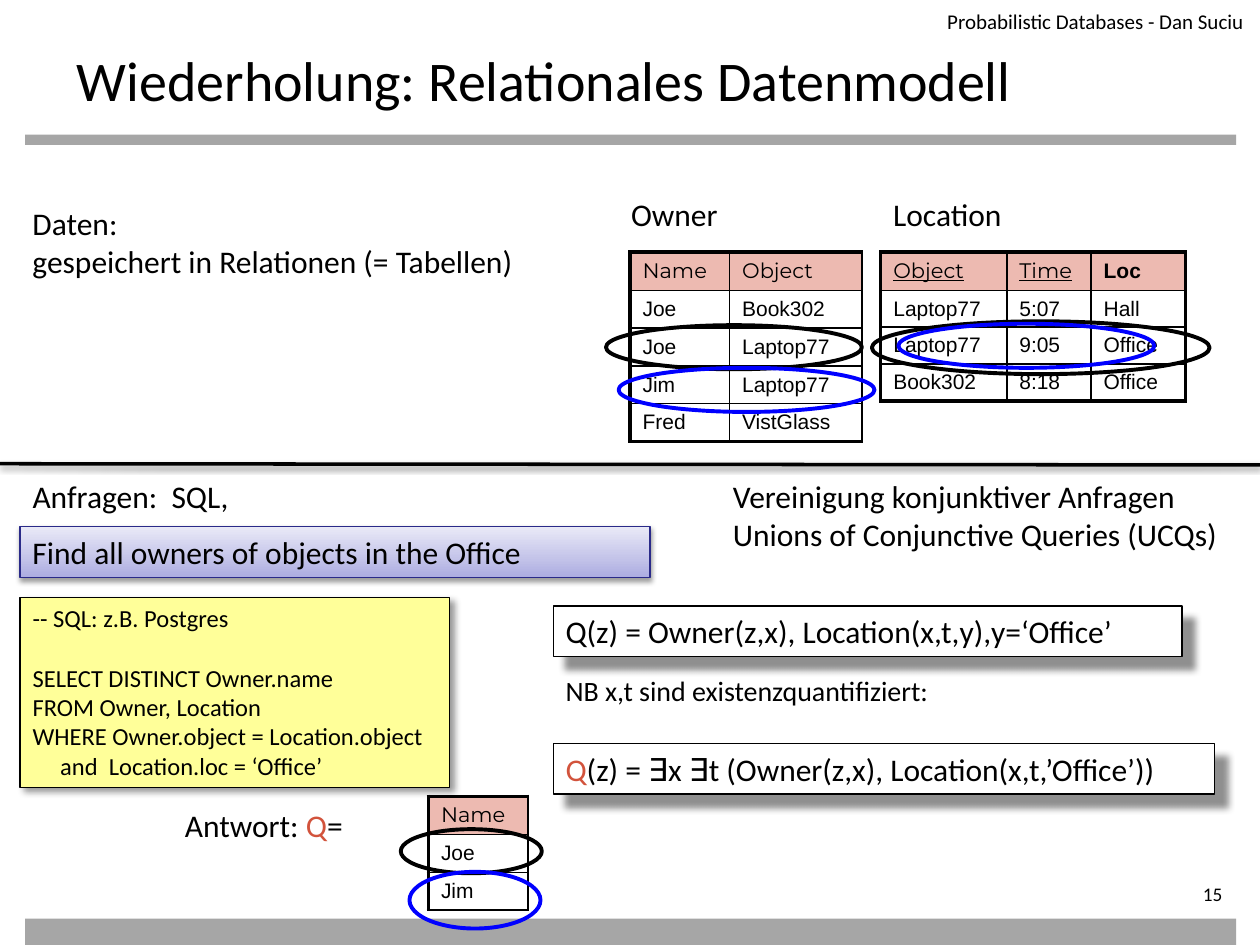
from lxml.etree import SubElement
from pptx import Presentation
from pptx.dml.color import RGBColor
from pptx.enum.shapes import MSO_CONNECTOR, MSO_SHAPE
from pptx.enum.text import MSO_ANCHOR, MSO_AUTO_SIZE, PP_ALIGN
from pptx.oxml.ns import qn
from pptx.util import Pt

HUES = {
    "ink": "000000", "paper": "FFFFFF", "bar": "A6A6A6", "head": "EDBAB1",
    "red": "D2533C", "blue": "0000FF", "note": "FFFF99",
    "edge": "2A2A89", "deep": "ADADE1", "pale": "E9E9F7",
}
TITLE = "Wiederholung: Relationales Datenmodell"
BARS = [(14.4, 77, 692, 5.8), (14.4, 524.9, 692, 15.1)]
THIN, THICK = 1, 2.25

# Plain labels: place, lines, format
LABELS = [
    ((503.3, 108, 83.5, 29), ["Location"], {}),
    ((353.5, 108, 68.4, 29), ["Owner"], {}),
    ((98.6, 457.2, 108, 29), [[("Antwort: ", "ink"), ("Q", "red"), ("=", "ink")]], {}),
    ((11.5, 113, 300.2, 51), ["Daten: ", "gespeichert in Relationen (= Tabellen)"], {}),
    ((11.5, 269.3, 130.3, 29), ["Anfragen:  SQL,"], {}),
    ((411.8, 269.3, 300.2, 51),
     ["Vereinigung konjunktiver Anfragen", "Unions of Conjunctive Queries (UCQs)"], {}),
    ((316.1, 381.6, 229, 26.6), ["NB x,t sind existenzquantifiziert:"], {"size": 16}),
    ((393.8, 1.4, 324, 26), ["Probabilistic Databases - Dan Suciu"],
     {"size": 12, "align": PP_ALIGN.RIGHT, "wrap": True}),
    ((626.4, 504, 79.2, 15.8), ["15"],
     {"size": 11, "align": PP_ALIGN.RIGHT, "wrap": True, "top": 0}),
]

# Shadows: opacity %, blur, distance, angle
SOFT, NEAR, FAR = (38, 3.1, 1.6, 90), (40, 4, 3, 45), (43, 4, 10, 45)
SQL = [
    "-- SQL: z.B. Postgres",
    "SELECT DISTINCT Owner.name",
    "FROM Owner, Location",
    "WHERE Owner.object = Location.object",
    "     and  Location.loc = ‘Office’",
]
BOXES = [
    ((11.5, 301, 360, 29), ["Find all owners of objects in the Office"],
     ("deep", "pale"), "edge", SOFT, {}),
    ((11.5, 341.3, 245.5, 108.7), SQL, ("note",), "ink", NEAR,
     {"size": 14, "gaps": {1: 17}}),
    ((316.1, 346.3, 359.3, 29), ["Q(z) = Owner(z,x), Location(x,t,y),y=‘Office’"],
     ("paper",), "ink", FAR, {}),
    ((316.1, 424.8, 378, 29),
     [[("Q", "red"), ("(z) = ∃x ∃t (Owner(z,x), Location(x,t,’Office’))", "ink")]],
     ("paper",), "ink", FAR, {}),
]

PLAIN = {"font": "Montserrat"}
KEY = {"font": "Montserrat", "line": True}
TABLES = [
    {"at": (503.3, 144), "cols": (72, 48.2, 54), "high": 21.1, "right": THICK,
     "base": THICK, "heads": (KEY, KEY, {"font": "Arial", "bold": True}),
     "rows": [("Object", "Time", "Loc"), ("Laptop77", "5:07", "Hall"),
              ("Laptop77", "9:05", "Office"), ("Book302", "8:18", "Office")]},
    {"at": (360, 144), "cols": (56.9, 75.6), "high": 21.6, "right": THIN,
     "base": THICK, "heads": (PLAIN, PLAIN),
     "rows": [("Name", "Object"), ("Joe", "Book302"), ("Joe", "Laptop77"),
              ("Jim", "Laptop77"), ("Fred", "VistGlass")]},
    {"at": (244.8, 455), "cols": (56.9,), "high": 21.6, "right": THIN,
     "base": THIN, "heads": (PLAIN,), "rows": [("Name",), ("Joe",), ("Jim",)]},
]
RINGS = [
    ("ink", (346.3, 185.8, 146.2, 25.2)),
    ("ink", (498.2, 183.6, 193, 30.2)),
    ("ink", (229, 473.8, 80.6, 25.2)),
    ("blue", (353.5, 210.2, 146.2, 25.2)),
    ("blue", (234, 498.2, 74.9, 32.4)),
    ("blue", (513.4, 185, 146.2, 25.2)),
]


def hue(name):
    return RGBColor.from_string(HUES[name])


def write(frame, lines, size=18, font="Calibri", bold=False, line=False,
          align=PP_ALIGN.LEFT, wrap=False, top=3.6, gaps=None):
    """Fill a frame; a line is a string or a list of (text, colour) runs."""
    frame.word_wrap = wrap
    frame.margin_top = Pt(top)
    for i, item in enumerate(lines):
        para = frame.paragraphs[0] if i == 0 else frame.add_paragraph()
        para.alignment = align
        if gaps and i in gaps:
            para.space_before = Pt(gaps[i])
        for text, tint in [(item, "ink")] if isinstance(item, str) else item:
            run = para.add_run()
            run.text = text
            run.font.size, run.font.name = Pt(size), font
            run.font.bold, run.font.underline = bold, line
            run.font.color.rgb = hue(tint)


def shade(shape, alpha, blur, dist, angle):
    props = shape._element.spPr
    for old in props.findall(qn("a:effectLst")):
        props.remove(old)
    cast = SubElement(
        SubElement(props, qn("a:effectLst")), qn("a:outerShdw"),
        blurRad=str(Pt(blur)), dist=str(Pt(dist)), dir=str(angle * 60000),
        algn="tl", rotWithShape="0")
    tone = SubElement(cast, qn("a:srgbClr"), val=HUES["ink"])
    SubElement(tone, qn("a:alpha"), val=str(alpha * 1000))


def draw(slide, kind, place, fills=(), edge=None, width=0.75):
    """Add a shape; two fills make a gradient that rises from the first."""
    shape = slide.shapes.add_shape(kind, *map(Pt, place))
    shape.shadow.inherit = False
    if len(fills) == 2:
        shape.fill.gradient()
        shape.fill.gradient_angle = 90
        for stop, name in zip(shape.fill.gradient_stops, fills):
            stop.color.rgb = hue(name)
    elif fills:
        shape.fill.solid()
        shape.fill.fore_color.rgb = hue(fills[0])
    else:
        shape.fill.background()
    if edge:
        shape.line.color.rgb = hue(edge)
        shape.line.width = Pt(width)
    else:
        shape.line.fill.background()
    return shape


def frame_cell(cell, sides):
    props = cell._tc.get_or_add_tcPr()
    for side, width in zip("LRTB", sides):
        rule = SubElement(props, qn("a:ln" + side), w=str(Pt(width)))
        fill = SubElement(rule, qn("a:solidFill"))
        SubElement(fill, qn("a:srgbClr"), val=HUES["ink"])


def tabulate(slide, data):
    rows, cols = data["rows"], data["cols"]
    size = (sum(cols), data["high"] * len(rows))
    table = slide.shapes.add_table(
        len(rows), len(cols), *map(Pt, data["at"] + size)).table
    table.first_row = table.horz_banding = False
    for col, width in zip(table.columns, cols):
        col.width = Pt(width)
    for r, row in enumerate(rows):
        table.rows[r].height = Pt(data["high"])
        for c, text in enumerate(row):
            cell = table.cell(r, c)
            frame_cell(cell, (
                THIN if c else THICK,
                data["right"] if c == len(cols) - 1 else THIN,
                THIN if r else THICK,
                data["base"] if r == len(rows) - 1 else THIN))
            cell.fill.solid()
            cell.fill.fore_color.rgb = hue("paper" if r else "head")
            cell.vertical_anchor = MSO_ANCHOR.MIDDLE
            style = {"font": "Arial"} if r else data["heads"][c]
            write(cell.text_frame, [text], size=12, wrap=True, **style)


def main():
    deck = Presentation()
    deck.slide_width, deck.slide_height = Pt(720), Pt(540)
    slide = deck.slides.add_slide(deck.slide_layouts[5])

    for place in BARS:
        draw(slide, MSO_SHAPE.RECTANGLE, place, ("bar",))

    title = slide.shapes.title
    title.left, title.top, title.width, title.height = map(Pt, (36.7, 20.2, 648, 46))
    frame = title.text_frame
    frame.auto_size = MSO_AUTO_SIZE.NONE
    frame.vertical_anchor = MSO_ANCHOR.TOP
    frame.margin_bottom = 0
    write(frame, [TITLE], size=32, wrap=True, top=6)

    for data in TABLES:
        tabulate(slide, data)

    split = slide.shapes.add_connector(
        MSO_CONNECTOR.STRAIGHT, *map(Pt, (0, 265, 720, 265.7)))
    split.line.color.rgb = hue("ink")
    split.line.width = Pt(2)
    shade(split, *SOFT)

    for place, lines, style in LABELS:
        write(slide.shapes.add_textbox(*map(Pt, place)).text_frame, lines, **style)

    for place, lines, fills, edge, cast, style in BOXES:
        box = draw(slide, MSO_SHAPE.RECTANGLE, place, fills, edge)
        shade(box, *cast)
        box.text_frame.vertical_anchor = MSO_ANCHOR.TOP
        write(box.text_frame, lines, **style)

    for edge, place in RINGS:
        draw(slide, MSO_SHAPE.OVAL, place, edge=edge, width=2.25)

    deck.save("out.pptx")


if __name__ == "__main__":
    main()
